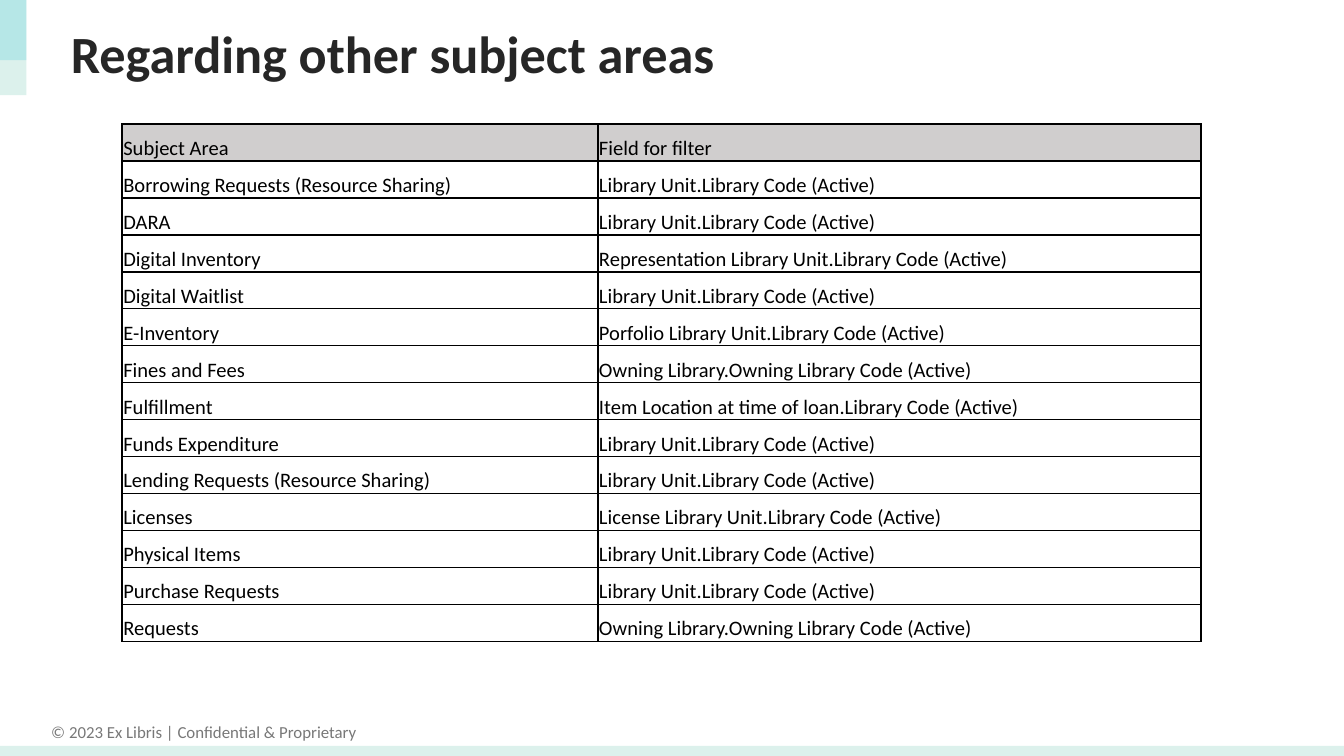
import pptx
import pptx.dml.color
import pptx.enum.shapes
import pptx.enum.text
import pptx.oxml
import pptx.oxml.ns
import pptx.util

Cm = pptx.util.Cm
Pt = pptx.util.Pt
ANCHOR = pptx.enum.text.MSO_ANCHOR
ALIGN = pptx.enum.text.PP_ALIGN

HEX = {
    "title": "262626",
    "foot": "787878",
    "text": "000000",
    "line": "000000",
    "head": "D0CECE",
    "mint": "DCF1EC",
    "teal": "50CFDA",
}
FONTS = {
    "title": {"name": "Calibri", "size": Pt(28), "bold": True},
    "foot": {"name": "Calibri", "size": Pt(9), "bold": False},
    "text": {"name": "Calibri", "size": Pt(11), "bold": False},
}
CELL = {
    "vertical_anchor": ANCHOR.BOTTOM,
    "margin_left": Cm(0.02),
    "margin_right": Cm(0.02),
    "margin_top": Cm(0.02),
    "margin_bottom": Cm(0),
}
UNIT = "Library Unit.Library Code (Active)"
OWNER = "Owning Library.Owning Library Code (Active)"
ROWS = [
    ("Subject Area", "Field for filter"),
    ("Borrowing Requests (Resource Sharing)", UNIT),
    ("DARA", UNIT),
    ("Digital Inventory", "Representation " + UNIT),
    ("Digital Waitlist", UNIT),
    ("E-Inventory", "Porfolio " + UNIT),
    ("Fines and Fees", OWNER),
    ("Fulfillment", "Item Location at time of loan.Library Code (Active)"),
    ("Funds Expenditure", UNIT),
    ("Lending Requests (Resource Sharing)", UNIT),
    ("Licenses", "License " + UNIT),
    ("Physical Items", UNIT),
    ("Purchase Requests", UNIT),
    ("Requests", OWNER),
]
WIDTHS = (8.99, 11.4)
HEIGHT = 0.7


def tint(name):
    return pptx.dml.color.RGBColor.from_string(HEX[name])


def assign(item, values):
    for key, value in values.items():
        setattr(item, key, value)


def write(para, text, style):
    run = para.add_run()
    run.text = text
    assign(run.font, FONTS[style])
    run.font.color.rgb = tint(style)


def add_text(slide, box, text, style, **frame):
    shape = slide.shapes.add_textbox(*map(Cm, box))
    assign(shape.text_frame, frame)
    para = shape.text_frame.paragraphs[0]
    write(para, text, style)
    return para


def add_bar(slide, box, name, alpha=100):
    """Add a plain rectangle; alpha is its opacity in percent."""
    kind = pptx.enum.shapes.MSO_SHAPE.RECTANGLE
    bar = slide.shapes.add_shape(kind, *map(Cm, box))
    bar.shadow.inherit = False
    bar.line.fill.background()
    bar.fill.solid()
    bar.fill.fore_color.rgb = tint(name)
    if alpha < 100:
        color = bar.fill._xPr.find(".//" + pptx.oxml.ns.qn("a:srgbClr"))
        mark = f'<a:alpha {pptx.oxml.ns.nsdecls("a")} val="{alpha * 1000}"/>'
        color.append(pptx.oxml.parse_xml(mark))


def add_edges(cell):
    """Draw all four borders; call before the fill is set."""
    props = cell._tc.get_or_add_tcPr()
    for side in "LRTB":
        props.append(pptx.oxml.parse_xml(
            f'<a:ln{side} {pptx.oxml.ns.nsdecls("a")} w="{Pt(1)}">'
            f'<a:solidFill><a:srgbClr val="{HEX["line"]}"/></a:solidFill>'
            f'</a:ln{side}>'))


def add_grid(slide, left, top):
    size = (sum(WIDTHS), HEIGHT * len(ROWS))
    frame = slide.shapes.add_table(
        len(ROWS), len(WIDTHS), *map(Cm, (left, top, *size)))
    table = frame.table
    assign(table, {"first_row": False, "horz_banding": False})
    for col, width in zip(table.columns, WIDTHS):
        col.width = Cm(width)
    for i, texts in enumerate(ROWS):
        table.rows[i].height = Cm(HEIGHT)
        for j, text in enumerate(texts):
            cell = table.cell(i, j)
            assign(cell, CELL)
            add_edges(cell)
            if i == 0:
                cell.fill.solid()
                cell.fill.fore_color.rgb = tint("head")
            else:
                cell.fill.background()
            write(cell.text_frame.paragraphs[0], text, "text")


def main():
    deck = pptx.Presentation()
    deck.slide_width, deck.slide_height = Cm(25.4), Cm(14.29)
    slide = deck.slides.add_slide(deck.slide_layouts[6])

    foot = add_text(slide, (0.69, 13.51, 6.32, 0.64),
                    "© 2023 Ex Libris | Confidential & Proprietary",
                    "foot", word_wrap=False)
    foot.alignment = ALIGN.CENTER
    add_bar(slide, (0, 14.1, 25.4, 0.19), "mint")
    add_bar(slide, (0, 0, 0.5, 1.8), "mint")
    add_bar(slide, (0, 0, 0.5, 1.14), "teal", 27)
    add_text(slide, (1.09, 0.2, 23.39, 1.6), "Regarding other subject areas",
             "title", word_wrap=True, vertical_anchor=ANCHOR.MIDDLE)
    add_grid(slide, 2.31, 2.34)
    deck.save("out.pptx")


if __name__ == "__main__":
    main()
